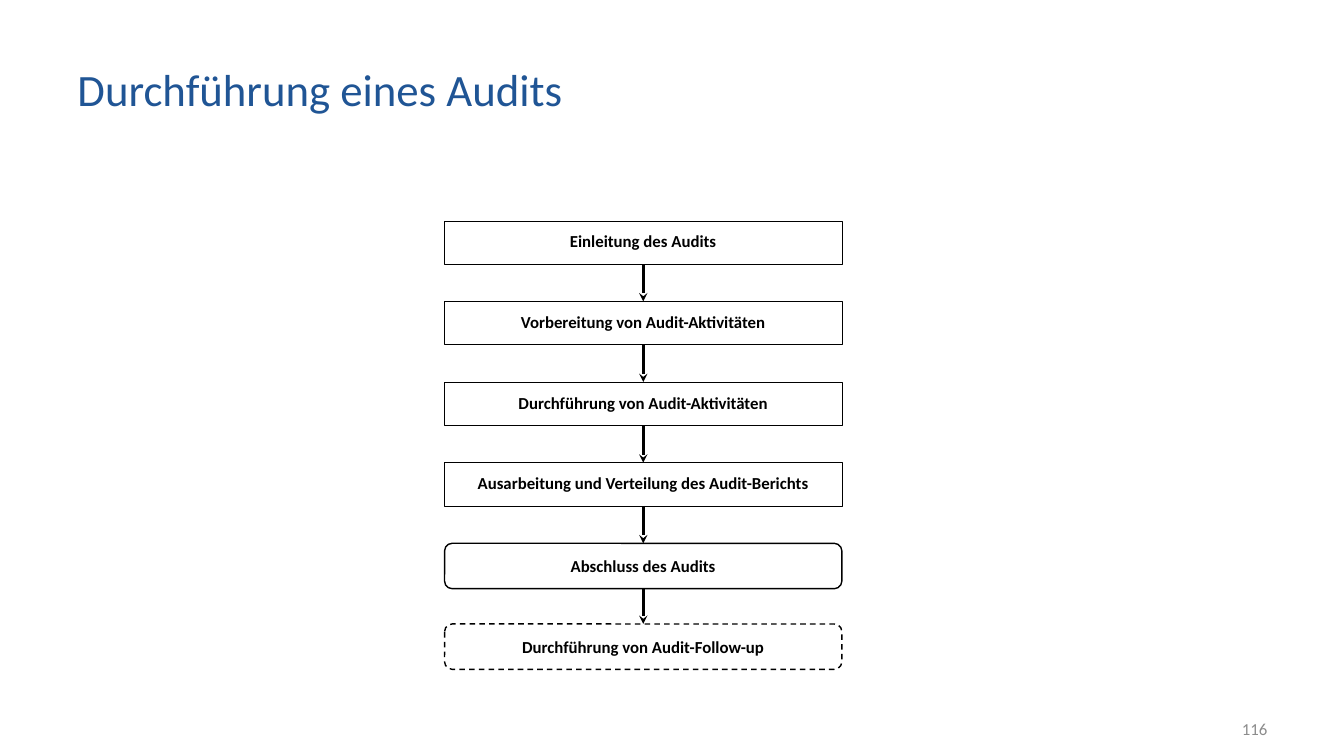
from dataclasses import dataclass

from lxml import etree
from pptx import Presentation
from pptx import util as u
from pptx.dml.color import RGBColor
from pptx.enum import dml, shapes, text
from pptx.oxml import ns


@dataclass(frozen=True)
class Theme:
    font: str = "Calibri"
    blue: str = "205595"
    gray: str = "8C8C8C"
    black: str = "000000"
    white: str = "FFFFFF"
    title_size: int = 32
    body_size: int = 12


class AuditSlide:
    def __init__(self, page, theme):
        self.page = page
        self.theme = theme

    def set_text(self, shape, content, color, size, align, bold=False, spacing=1.0):
        frame = shape.text_frame
        frame_format = {"word_wrap": True, "vertical_anchor": text.MSO_ANCHOR.MIDDLE}
        for name, value in frame_format.items():
            setattr(frame, name, value)
        para = frame.paragraphs[0]
        para.alignment = align
        para.line_spacing = spacing
        span = para.add_run()
        span.text = content
        span_format = {"name": self.theme.font, "size": u.Pt(size), "bold": bold}
        for name, value in span_format.items():
            setattr(span.font, name, value)
        span.font.color.rgb = RGBColor.from_string(color)

    def label(self, area, content, color, size, align):
        box = self.page.shapes.add_textbox(*map(u.Inches, area))
        self.set_text(box, content, color, size, align)

    def step(self, area, content, kind, width, dash, spacing):
        box = self.page.shapes.add_shape(kind, *map(u.Inches, area))
        box.shadow.inherit = False
        box.fill.solid()
        box.fill.fore_color.rgb = RGBColor.from_string(self.theme.white)
        box.line.color.rgb = RGBColor.from_string(self.theme.black)
        line_format = {"width": u.Pt(width), "dash_style": dash}
        for name, value in line_format.items():
            setattr(box.line, name, value)
        self.set_text(box, content, self.theme.black, self.theme.body_size,
                      text.PP_ALIGN.CENTER, True, spacing)
        return box

    def arrow(self, upper, lower):
        link = self.page.shapes.add_connector(shapes.MSO_CONNECTOR.STRAIGHT, 0, 0, 0, 0)
        link.begin_connect(upper, 2)
        link.end_connect(lower, 0)
        link.line.width = u.Pt(2)
        link.line.color.rgb = RGBColor.from_string(self.theme.black)
        outline = link._element.spPr.find(ns.qn("a:ln"))
        etree.SubElement(outline, ns.qn("a:tailEnd"), type="stealth")
        etree.SubElement(link._element.spPr, ns.qn("a:effectLst"))


def main():
    deck = Presentation()
    deck.slide_width, deck.slide_height = u.Inches(13.33), u.Inches(7.5)
    theme = Theme()
    slide = AuditSlide(deck.slides.add_slide(deck.slide_layouts[6]), theme)

    slide.label((0.67, 0.3, 9.91, 1.15), "Durchführung eines Audits",
                theme.blue, theme.title_size, text.PP_ALIGN.LEFT)
    slide.label((9.56, 7.03, 3.11, 0.4), "116",
                theme.gray, theme.body_size, text.PP_ALIGN.RIGHT)

    square = shapes.MSO_SHAPE.RECTANGLE, 0.43, 0.25
    rounded = shapes.MSO_SHAPE.ROUNDED_RECTANGLE, 0.45, 1
    solid, dashed = dml.MSO_LINE.SOLID, dml.MSO_LINE.DASH
    steps = [
        ("Einleitung des Audits", square, solid, 0.9),
        ("Vorbereitung von Audit-Aktivitäten", square, solid, 0.9),
        ("Durchführung von Audit-Aktivitäten", square, solid, 0.9),
        ("Ausarbeitung und Verteilung des Audit-Berichts", square, solid, 0.8),
        ("Abschluss des Audits", rounded, solid, 1.0),
        ("Durchführung von Audit-Follow-up", rounded, dashed, 1.0),
    ]
    left, top, width, pitch = 4.41, 2.19, 3.94, 0.8
    boxes = []
    for row, (content, (kind, height, line), dash, spacing) in enumerate(steps):
        area = left, top + row * pitch, width, height
        boxes.append(slide.step(area, content, kind, line, dash, spacing))
    for upper, lower in zip(boxes, boxes[1:]):
        slide.arrow(upper, lower)

    deck.save("out.pptx")


if __name__ == "__main__":
    main()
